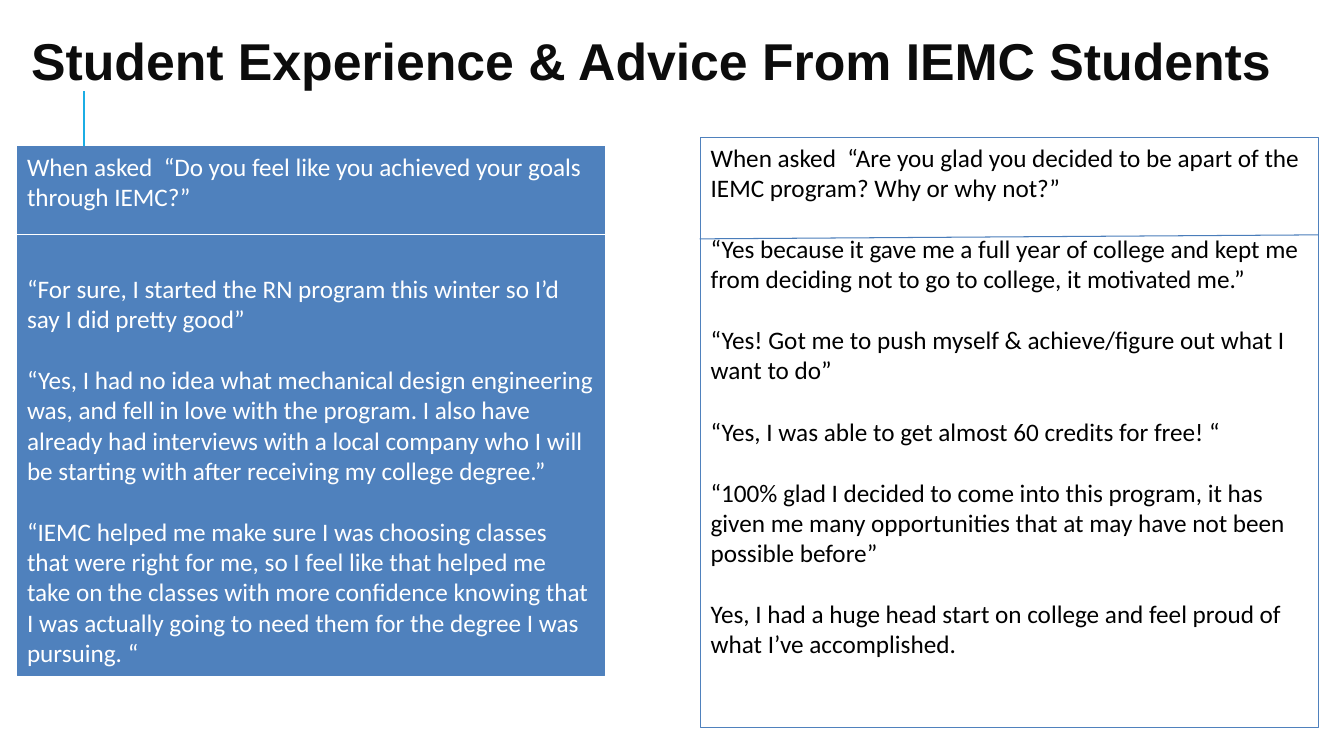
from pptx import Presentation
from pptx.dml.color import RGBColor
from pptx.enum import shapes, text
from pptx.oxml.ns import qn
from pptx.util import Inches, Pt

# Content
TITLE = "Student Experience & Advice From IEMC Students"
GOALS = [
    "When asked  “Do you feel like you achieved your goals through IEMC?”",
    "“For sure, I started the RN program this winter so I’d say I did pretty good”",
    "“Yes, I had no idea what mechanical design engineering was, and fell in love with "
    "the program. I also have already had interviews with a local company who I will be "
    "starting with after receiving my college degree.”",
    "“IEMC helped me make sure I was choosing classes that were right for me, so I feel "
    "like that helped me take on the classes with more confidence knowing that I was "
    "actually going to need them for the degree I was pursuing. “",
]
DECISION = [
    "When asked  “Are you glad you decided to be apart of the IEMC program? Why or why not?”",
    "“Yes because it gave me a full year of college and kept me from deciding not to go "
    "to college, it motivated me.”",
    "“Yes! Got me to push myself & achieve/figure out what I want to do”",
    "“Yes, I was able to get almost 60 credits for free! “",
    "“100% glad I decided to come into this program, it has given me many opportunities "
    "that at may have not been possible before”",
    "Yes, I had a huge head start on college and feel proud of what I’ve accomplished.",
]

# Colours
WHITE = RGBColor(0xFF, 0xFF, 0xFF)
BLACK = RGBColor(0x00, 0x00, 0x00)
TITLE_INK = RGBColor(0x0C, 0x0C, 0x0C)
PANEL_BLUE = RGBColor(0x4F, 0x81, 0xBD)
RULE_BLUE = RGBColor(0x4A, 0x7D, 0xBA)
ACCENT = RGBColor(0x1B, 0xAD, 0xE4)

LINE = 22  # points in one line of 18 pt text

# Panel: answers, box in inches, fill, text colour, lines before the first answer
PANELS = [
    (GOALS, (0.17, 1.45, 5.83, 5.25), PANEL_BLUE, WHITE, 2),
    (DECISION, (6.95, 1.36, 6.13, 5.86), None, BLACK, 1),
]
# Rule: start, end, colour, width in points
ACCENT_RULE = ((0.83, 1.9), (0.83, 0.9), ACCENT, 1.5)
DIVIDERS = [
    ((6.94, 2.37), (13.08, 2.33), RULE_BLUE, 0.75),
    ((0.17, 2.33), (6, 2.33), WHITE, 0.75),
]

prs = Presentation()
prs.slide_width, prs.slide_height = Inches(13.33), Inches(7.5)
slide = prs.slides.add_slide(prs.slide_layouts[6])


def set_font(paragraph, name, size, color, bold=False):
    for run in paragraph.runs:
        run.font.name, run.font.size, run.font.bold = name, Pt(size), bold
        run.font.color.rgb = color


def add_rule(start, end, color, width):
    rule = slide.shapes.add_connector(
        shapes.MSO_CONNECTOR.STRAIGHT, *map(Inches, start + end))
    rule.line.color.rgb, rule.line.width = color, Pt(width)
    props = rule._element.spPr
    props.append(props.makeelement(qn("a:effectLst"), {}))


def add_panel(quotes, box, fill, ink, first_gap):
    panel = slide.shapes.add_shape(shapes.MSO_SHAPE.RECTANGLE, *map(Inches, box))
    panel.shadow.inherit = False
    if fill is None:
        panel.fill.background()
    else:
        panel.fill.solid()
        panel.fill.fore_color.rgb = fill
    panel.line.color.rgb, panel.line.width = PANEL_BLUE, Pt(0.75)
    frame = panel.text_frame
    frame.word_wrap = True
    frame.vertical_anchor = text.MSO_ANCHOR.TOP
    frame.text = "\n".join(quotes)
    for i, quote in enumerate(frame.paragraphs):
        quote.alignment = text.PP_ALIGN.LEFT
        if i:
            quote.space_before = Pt(LINE * (first_gap if i == 1 else 1))
        set_font(quote, "Calibri", 18, ink)


# Accent line behind everything
add_rule(*ACCENT_RULE)

# Title
heading = slide.shapes.add_textbox(*map(Inches, (0.31, 0.16, 12.7, 0.77))).text_frame
heading.word_wrap = True
heading.margin_left = heading.margin_right = heading.margin_bottom = 0
heading.margin_top = Inches(0.17)
heading.text = TITLE
heading.paragraphs[0].line_spacing = 0.96
set_font(heading.paragraphs[0], "Arial", 37, TITLE_INK, bold=True)

# Answer panels and the lines under their questions
for panel_args in PANELS:
    add_panel(*panel_args)
for divider in DIVIDERS:
    add_rule(*divider)

prs.save("out.pptx")
